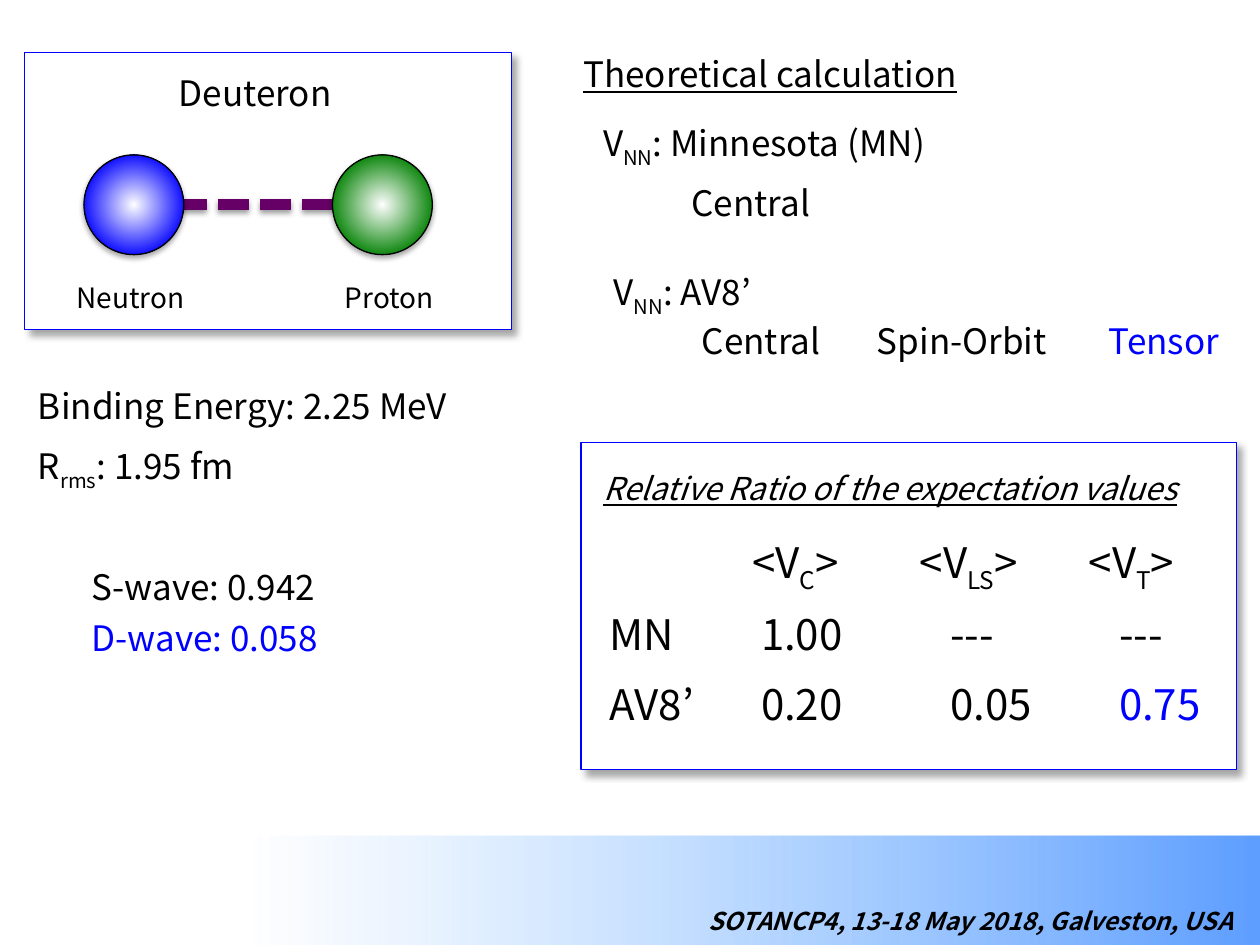
from lxml.etree import SubElement
from pptx import Presentation
from pptx.dml.color import RGBColor
from pptx.enum.dml import MSO_LINE
from pptx.enum.shapes import MSO_CONNECTOR, MSO_SHAPE
from pptx.enum.text import MSO_ANCHOR, MSO_AUTO_SIZE, PP_ALIGN
from pptx.oxml.ns import qn
from pptx.util import Pt

FONT = "Noto Sans CJK JP"
BLACK = RGBColor(0x00, 0x00, 0x00)
WHITE = RGBColor(0xFF, 0xFF, 0xFF)
BLUE = RGBColor(0x00, 0x00, 0xFF)
GREEN = RGBColor(0x00, 0x80, 0x00)
PURPLE = RGBColor(0x66, 0x00, 0x66)
SKY = RGBColor(0x5E, 0x9E, 0xFF)
PALE_SKY = RGBColor(0x85, 0xC2, 0xFF)


def sub(parent, tag, **attrs):
    """Append a DrawingML element with the given attributes."""
    return SubElement(parent, qn(tag), {k: str(v) for k, v in attrs.items()})


def add_color(parent, color, alpha):
    """Append a colour with its opacity in percent."""
    clr = sub(parent, "a:srgbClr", val=color)
    sub(clr, "a:alpha", val=alpha * 1000)


def set_gradient(s, stops, radial=False):
    """Fill a shape with a radial or right-to-left gradient."""
    grad = sub(s._element.spPr, "a:gradFill", rotWithShape=1)
    gs_lst = sub(grad, "a:gsLst")
    for pos, color, alpha in stops:
        add_color(sub(gs_lst, "a:gs", pos=pos * 1000), color, alpha)
    if radial:
        center = sub(grad, "a:path", path="circle")
        sub(center, "a:fillToRect", l=50000, t=50000, r=50000, b=50000)
    else:
        sub(grad, "a:lin", ang=180 * 60000, scaled=0)


def set_shadow(s, alpha, blur, dist, angle):
    """Give a shape or connector an outer shadow."""
    effects = sub(s._element.spPr, "a:effectLst")
    shadow = sub(effects, "a:outerShdw", blurRad=Pt(blur), dist=Pt(dist),
                 dir=angle * 60000, algn="tl", rotWithShape=0)
    add_color(shadow, BLACK, alpha)


def add_shape(slide, kind, x, y, w, h):
    """Add a preset shape."""
    return slide.shapes.add_shape(kind, Pt(x), Pt(y), Pt(w), Pt(h))


def add_band(slide):
    """Add the fading band along the bottom."""
    s = add_shape(slide, MSO_SHAPE.RECTANGLE, 0, 477.5, 720, 62.5)
    set_gradient(s, [(0, SKY, 100), (80, PALE_SKY, 0), (100, PALE_SKY, 0)])
    s.line.fill.background()
    s.shadow.inherit = False


def add_panel(slide, x, y, w, h):
    """Add a white panel with a blue outline."""
    s = add_shape(slide, MSO_SHAPE.RECTANGLE, x, y, w, h)
    s.fill.solid()
    s.fill.fore_color.rgb = WHITE
    s.line.color.rgb = BLUE
    s.line.width = Pt(0.75)
    set_shadow(s, 35, 4, 4, 45)


def add_nucleon(slide, x, color):
    """Add a shaded nucleon ball."""
    s = add_shape(slide, MSO_SHAPE.OVAL, x, 88.5, 57, 57)
    set_gradient(s, [(0, WHITE, 100), (76, color, 100)], radial=True)
    s.line.color.rgb = BLACK
    s.line.width = Pt(0.75)
    set_shadow(s, 35, 3.1, 1.8, 90)


def add_bond(slide):
    """Add the dashed bond between the nucleons."""
    s = slide.shapes.add_connector(MSO_CONNECTOR.STRAIGHT, Pt(76.3), Pt(117), Pt(224), Pt(117))
    s.line.color.rgb = PURPLE
    s.line.width = Pt(6)
    s.line.dash_style = MSO_LINE.SQUARE_DOT
    set_shadow(s, 38, 3.1, 1.6, 90)


def write(p, text, size=20, color=BLACK, bold=None, italic=None, underline=None):
    """Write text whose subscripts stand between bars."""
    for i, part in enumerate(text.split("|")):
        r = p.add_run()
        r.text = part
        if i % 2:
            r.font._element.set("baseline", "-25000")
    f = p.font
    f.name, f.size, f.color.rgb = FONT, Pt(size), color
    f.bold, f.italic, f.underline = bold, italic, underline


def add_label(slide, text, x, y, w, h=31.5, **style):
    """Add a one-line text box."""
    s = slide.shapes.add_textbox(Pt(x), Pt(y), Pt(w), Pt(h))
    tf = s.text_frame
    tf.word_wrap = False
    tf.auto_size = MSO_AUTO_SIZE.SHAPE_TO_FIT_TEXT
    write(tf.paragraphs[0], text, **style)
    return s


def place(s, x, y, w, h, anchor):
    """Move a placeholder and return its text frame."""
    s.left, s.top, s.width, s.height = Pt(x), Pt(y), Pt(w), Pt(h)
    tf = s.text_frame
    tf.auto_size = MSO_AUTO_SIZE.NONE
    tf.vertical_anchor = anchor
    return tf


def add_title(slide, text):
    """Fill the title placeholder."""
    p = place(slide.shapes.title, 326, 26, 234, 31.5, MSO_ANCHOR.MIDDLE).paragraphs[0]
    p.alignment = PP_ALIGN.LEFT
    write(p, text, underline=True)


def add_properties(slide, items):
    """Fill the body placeholder with the deuteron properties."""
    tf = place(slide.placeholders[1], 14.5, 216, 273, 190, MSO_ANCHOR.TOP)
    for i, (text, indent, before, color) in enumerate(items):
        p = tf.add_paragraph() if i else tf.paragraphs[0]
        p.space_before = Pt(before)
        pPr = p._p.get_or_add_pPr()
        pPr.set("marL", str(Pt(indent)))
        pPr.set("indent", "0")
        sub(pPr, "a:buNone")
        write(p, text, color=color)


def add_ratio_table(slide, rows):
    """Add the table of expectation value ratios."""
    columns = [(81.4, 0), (95.8, 5), (96.5, 17.3), (88, 17.3)]
    row_h = 39.6
    width = sum(w for w, _ in columns)
    table = slide.shapes.add_table(len(rows), len(columns), Pt(341.3), Pt(302),
                                   Pt(width), Pt(row_h * len(rows))).table
    table.first_row = table.horz_banding = False
    for column, (w, _) in zip(table.columns, columns):
        column.width = Pt(w)
    for i, row in enumerate(rows):
        for j, text in enumerate(row):
            cell = table.cell(i, j)
            cell.fill.background()
            cell.vertical_anchor = MSO_ANCHOR.MIDDLE
            cell.margin_top = cell.margin_bottom = cell.margin_right = 0
            cell.margin_left = Pt(7.2 + (columns[j][1] if i else 0))
            write(cell.text_frame.paragraphs[0], text, size=24,
                  color=BLUE if text == "0.75" else BLACK)


def add_footer(slide, text):
    """Add the right-aligned conference line."""
    s = add_label(slide, text, 303, 514, 409, 24.5, size=14, bold=True, italic=True)
    s.text_frame.word_wrap = True
    s.text_frame.paragraphs[0].alignment = PP_ALIGN.RIGHT


def main():
    """Build the deuteron slide."""
    prs = Presentation()
    prs.slide_width, prs.slide_height = Pt(720), Pt(540)
    slide = prs.slides.add_slide(prs.slide_layouts[1])
    add_band(slide)
    add_title(slide, "Theoretical calculation")
    add_properties(slide, [
        ("Binding Energy: 2.25 MeV", 0, 0, BLACK),
        ("R|rms|: 1.95 fm", 0, 10.6, BLACK),
        ("S-wave: 0.942", 30.5, 41.6, BLACK),
        ("D-wave: 0.058", 30.5, 4.9, BLUE),
    ])

    add_panel(slide, 14.2, 30, 278, 158.5)
    add_label(slide, "Deuteron", 95, 37.5, 106)
    add_bond(slide)
    add_nucleon(slide, 48, BLUE)
    add_nucleon(slide, 190, GREEN)
    add_label(slide, "Neutron", 36.7, 157, 78.5, 26.5, size=16)
    add_label(slide, "Proton", 190, 157, 66, 26.5, size=16)

    add_label(slide, "V|NN|: Minnesota (MN)", 337.5, 66, 220)
    add_label(slide, "Central", 388, 100, 85)
    add_label(slide, "V|NN|: AV8’", 343.5, 151, 109)
    for text, x, w, color in [("Central", 394, 85, BLACK),
                              ("Spin-Orbit", 494, 115, BLACK),
                              ("Tensor", 626.5, 80, BLUE)]:
        add_label(slide, text, x, 179.3, w, color=color)

    add_panel(slide, 332, 252.8, 374.5, 187)
    add_label(slide, "Relative Ratio of the expectation values", 337.7, 264.3, 370, 29,
              size=18, italic=True, underline=True)
    add_ratio_table(slide, [
        ("", "<V|C|>", "<V|LS|>", "<V|T|>"),
        ("MN", "1.00", "---", "---"),
        ("AV8’", "0.20", "0.05", "0.75"),
    ])
    add_footer(slide, "SOTANCP4, 13-18 May 2018, Galveston, USA")
    prs.save("out.pptx")


if __name__ == "__main__":
    main()
